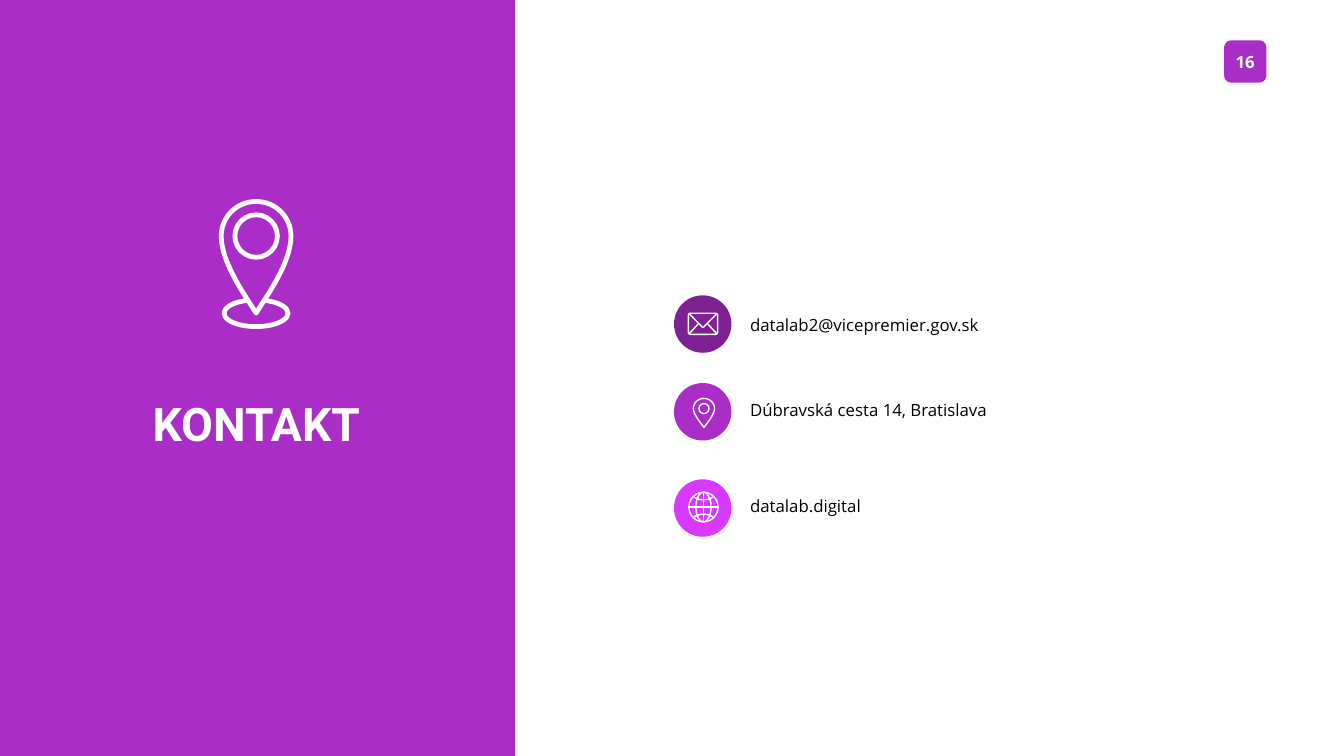
from pptx import Presentation
from pptx.dml.color import RGBColor
from pptx.enum.shapes import MSO_SHAPE
from pptx.enum.text import MSO_ANCHOR, PP_ALIGN
from pptx.util import Pt

WHITE = RGBColor(0xFF, 0xFF, 0xFF)
BLACK = RGBColor(0, 0, 0)
PURPLE = RGBColor(0xAA, 0x2D, 0xC8)
DARK_PURPLE = RGBColor(0x7E, 0x21, 0x93)
BRIGHT_PURPLE = RGBColor(0xD8, 0x39, 0xFF)
THIN = 2


def style_shape(shape, fill=None, line_width=None):
    shape.shadow.inherit = False
    if fill is None:
        shape.fill.background()
    else:
        shape.fill.solid()
        shape.fill.fore_color.rgb = fill
    if line_width is None:
        shape.line.fill.background()
    else:
        shape.line.color.rgb = WHITE
        shape.line.width = Pt(line_width)
    return shape


def add_preset(slide, preset, box, fill=None, line_width=None):
    shape = slide.shapes.add_shape(preset, *map(Pt, box))
    return style_shape(shape, fill, line_width)


def add_outline(slide, box, points, line_width, fill=None, close=False):
    left, top, width, height = box
    places = [(Pt(left + x * width), Pt(top + y * height)) for x, y in points]
    builder = slide.shapes.build_freeform(*places[0], scale=1.0)
    builder.add_line_segments(places[1:], close=close)
    return style_shape(builder.convert_to_shape(), fill, line_width)


def curve(start, control_1, control_2, end, steps=16):
    points = []
    for step in range(steps + 1):
        t = step / steps
        weights = ((1 - t) ** 3, 3 * t * (1 - t) ** 2, 3 * t * t * (1 - t), t ** 3)
        corners = (start, control_1, control_2, end)
        points.append(tuple(sum(w * corner[axis] for w, corner in zip(weights, corners))
                            for axis in (0, 1)))
    return points


def set_text(shape, text, size, font="Open Sans", color=BLACK, bold=False,
             align=PP_ALIGN.LEFT, anchor=MSO_ANCHOR.MIDDLE, spacing=1.0,
             margins=(7.2, 3.6), wrap=True):
    frame = shape.text_frame
    frame.word_wrap = wrap
    frame.vertical_anchor = anchor
    frame.margin_left = frame.margin_right = Pt(margins[0])
    frame.margin_top = frame.margin_bottom = Pt(margins[1])
    paragraph = frame.paragraphs[0]
    paragraph.alignment = align
    paragraph.line_spacing = spacing
    run = paragraph.add_run()
    run.text = text
    run.font.name = font
    run.font.size = Pt(size)
    run.font.bold = bold
    run.font.color.rgb = color


def draw_pin(slide, box, line_width=THIN, ring=0.48, head=0.35, fill=None):
    left, top, width, height = box
    side = curve((0.5, 1), (0.35, 0.85), (0, 0.55), (0, head))
    side += curve((0, head), (0, head * 0.45), (0.22, 0), (0.5, 0))[1:]
    mirrored = [(1 - x, y) for x, y in reversed(side[1:-1])]
    add_outline(slide, box, side + mirrored, line_width, fill, close=True)
    diameter = ring * width
    add_preset(slide, MSO_SHAPE.OVAL,
               (left + (width - diameter) / 2, top + head * height - diameter / 2,
                diameter, diameter), line_width=line_width)


def draw_envelope(slide, box):
    body = add_preset(slide, MSO_SHAPE.ROUNDED_RECTANGLE, box, line_width=THIN)
    body.adjustments[0] = 0.1
    flap = [(0.03, 0.03)] + curve((0.44, 0.6), (0.48, 0.68), (0.52, 0.68), (0.56, 0.6))
    add_outline(slide, box, flap + [(0.97, 0.03)], THIN)
    for corner, fold in ((0.03, 0.34), (0.97, 0.66)):
        add_outline(slide, box, [(corner, 0.97), (fold, 0.5)], THIN)


def draw_globe(slide, box):
    left, top, width, height = box
    add_preset(slide, MSO_SHAPE.OVAL, box, line_width=THIN)
    add_preset(slide, MSO_SHAPE.OVAL,
               (left + 0.24 * width, top, 0.52 * width, height), line_width=THIN)
    north = curve((0.17, 0.16), (0.37, 0.29), (0.63, 0.29), (0.83, 0.16))
    south = [(x, 1 - y) for x, y in north]
    for line in (north, south, [(0, 0.5), (1, 0.5)], [(0.5, 0), (0.5, 1)]):
        add_outline(slide, box, line, THIN)


def build_title_panel(slide, box):
    left, top, width, height = box
    panel = add_preset(slide, MSO_SHAPE.RECTANGLE, box, PURPLE)
    title = slide.shapes.title
    title.left, title.top = Pt(left + 129.6), Pt(top + 520.6)
    title.width, title.height = Pt(473), Pt(128.9)
    set_text(title, "KONTAKT", 66, font="Roboto", color=WHITE, bold=True,
             align=PP_ALIGN.CENTER, anchor=MSO_ANCHOR.TOP, spacing=1.52)
    panel.element.addnext(title.element)
    stroke = 6.8
    add_preset(slide, MSO_SHAPE.OVAL, (left + 320, top + 428.4, 91.4, 38.2),
               line_width=stroke)
    draw_pin(slide, (left + 316, top + 287.8, 99.6, 159.4), stroke,
             ring=0.61, head=0.31, fill=PURPLE)


def build_page_badge(slide, box):
    badge = add_preset(slide, MSO_SHAPE.ROUNDED_RECTANGLE, box, PURPLE)
    badge.adjustments[0] = 0.167
    set_text(badge, "16", 24, color=WHITE, bold=True, align=PP_ALIGN.CENTER,
             margins=(0, 0), wrap=False)


def build_contact(slide, box, text, text_offset, color, draw_icon, icon_box):
    left, top, width, height = box
    add_preset(slide, MSO_SHAPE.OVAL, (left, top, height, height), color)
    icon_left, icon_top, icon_width, icon_height = icon_box
    draw_icon(slide, (left + icon_left, top + icon_top, icon_width, icon_height))
    text_left = left + 101.5
    label = slide.shapes.add_textbox(Pt(text_left), Pt(top + text_offset),
                                     Pt(left + width - text_left), Pt(36))
    set_text(label, text, 24)


def main():
    presentation = Presentation()
    presentation.slide_width, presentation.slide_height = Pt(1919.52), Pt(1080)
    slide = presentation.slides.add_slide(presentation.slide_layouts[5])
    build_title_panel(slide, (0, 0, 735.8, 1080))
    build_page_badge(slide, (1748.2, 57.6, 60.5, 60.5))
    contacts = (
        (421.9, 500.4, "datalab2@vicepremier.gov.sk", 24.5, DARK_PURPLE,
         draw_envelope, (20.5, 25.6, 41.8, 30.2)),
        (547.2, 460, "Dúbravská cesta 14, Bratislava", 20.9, PURPLE,
         draw_pin, (27.7, 22, 30.2, 41.4)),
        (684.7, 357, "datalab.digital", 19.5, BRIGHT_PURPLE,
         draw_globe, (21.2, 18.4, 41.8, 42.5)),
    )
    for top, width, *details in contacts:
        build_contact(slide, (962.6, top, width, 82.1), *details)
    presentation.save("out.pptx")


if __name__ == "__main__":
    main()
